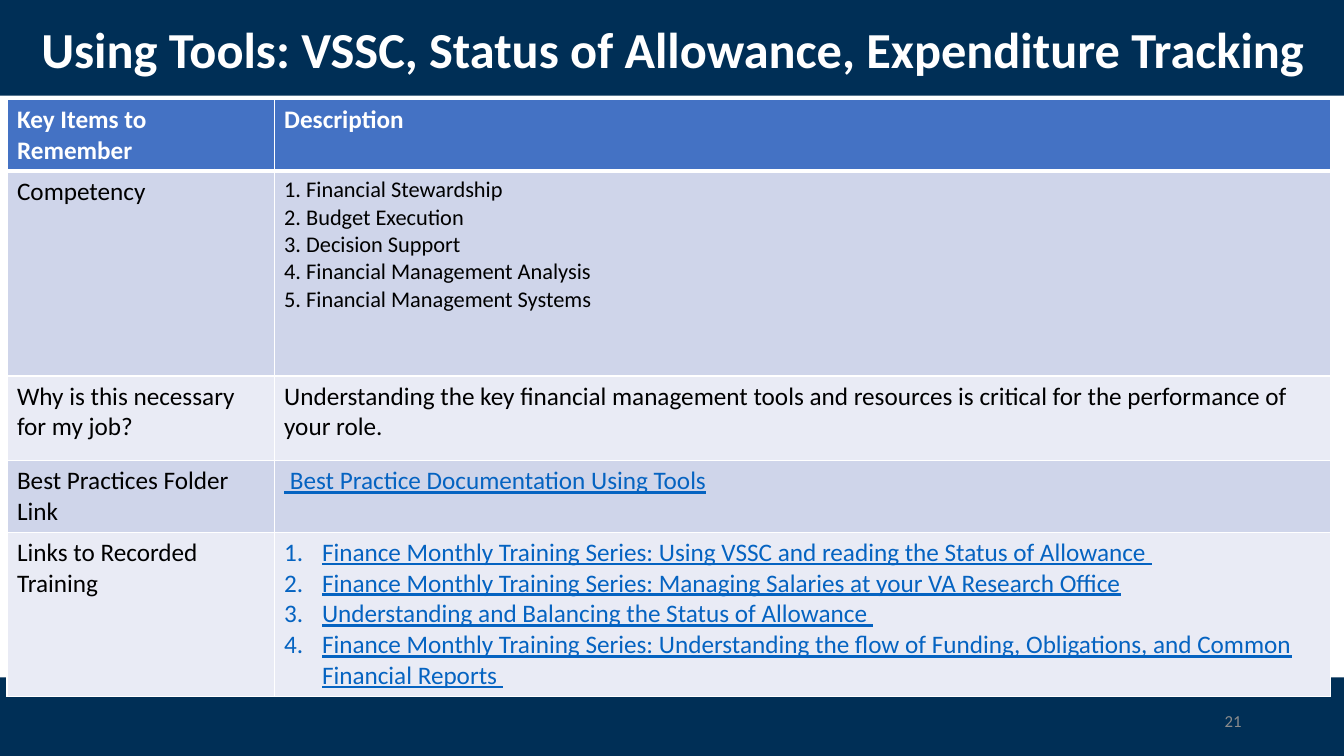
from dataclasses import dataclass

from lxml.etree import SubElement
from pptx import Presentation
from pptx.dml.color import RGBColor
from pptx.enum.shapes import MSO_SHAPE
from pptx.enum.text import MSO_ANCHOR, PP_ALIGN
from pptx.oxml.ns import qn
from pptx.util import Pt

FONT = "Calibri"
NAVY, BLUE, WHITE, BLACK = "002F56", "4472C4", "FFFFFF", "000000"
LINK, GREY = "0563C1", "8C8C8C"
BAND_FILLS = ("CFD5EA", "E9EBF5")
COLUMN_WIDTHS = (190.8, 754.8)
LIST_INDENT = 27


@dataclass(frozen=True)
class Band:
    top: float
    height: float


@dataclass(frozen=True)
class Item:
    label: str
    description: tuple[str, ...]
    height: float
    size: float = 18
    is_link: bool = False
    numbered: bool = False


BANDS = (Band(0, 68.4), Band(483.8, 56.2))

ITEMS = (
    Item("Key Items to Remember", ("Description ",), 47.5),
    Item("Competency", (
        "1. Financial Stewardship",
        "2. Budget Execution ",
        "3. Decision Support",
        "4. Financial Management Analysis ",
        "5. Financial Management Systems",
    ), 146.2, size=16),
    Item("Why is this necessary for my job?", (
        "Understanding the key financial management tools and resources is "
        "critical for the performance of your role.",
    ), 60.5),
    Item("Best Practices Folder Link",
         (" Best Practice Documentation Using Tools",), 47.5, is_link=True),
    Item("Links to Recorded Training", (
        "Finance Monthly Training Series: Using VSSC and reading the Status of Allowance ",
        "Finance Monthly Training Series: Managing Salaries at your VA Research Office",
        "Understanding and Balancing the Status of Allowance ",
        "Finance Monthly Training Series: Understanding the flow of Funding, "
        "Obligations, and Common Financial Reports ",
    ), 108, is_link=True, numbered=True),
)


def rgb(value: str) -> RGBColor:
    return RGBColor.from_string(value)


def write(frame, *lines: str, size: float = 18, color: str = BLACK,
          bold: bool = False, underline: bool = False, numbered: bool = False,
          align: PP_ALIGN = PP_ALIGN.LEFT, spacing: float = 1.0) -> None:
    frame.word_wrap = True
    for index, line in enumerate(lines):
        paragraph = frame.paragraphs[0] if index == 0 else frame.add_paragraph()
        paragraph.alignment = align
        paragraph.line_spacing = spacing
        if numbered:
            number_paragraph(paragraph)
        run = paragraph.add_run()
        run.text = line
        font = run.font
        font.name, font.size = FONT, Pt(size)
        font.bold, font.underline = bold, underline
        font.color.rgb = rgb(color)


def number_paragraph(paragraph) -> None:
    properties = paragraph._p.get_or_add_pPr()
    properties.set("marL", str(Pt(LIST_INDENT)))
    properties.set("indent", str(-Pt(LIST_INDENT)))
    SubElement(properties, qn("a:buFont"), typeface="+mj-lt")
    SubElement(properties, qn("a:buAutoNum"), type="arabicPeriod")


def style_cell(cell, fill: str, top: float, bottom: float) -> None:
    """Give the cell white borders, then its fill."""
    properties = cell._tc.get_or_add_tcPr()
    for side, width in (("L", 1), ("R", 1), ("T", top), ("B", bottom)):
        line = SubElement(properties, qn(f"a:ln{side}"), w=str(Pt(width)))
        SubElement(SubElement(line, qn("a:solidFill")), qn("a:srgbClr"), val=WHITE)
    cell.fill.solid()
    cell.fill.fore_color.rgb = rgb(fill)


def add_band(slide, band: Band) -> None:
    shape = slide.shapes.add_shape(
        MSO_SHAPE.RECTANGLE, 0, Pt(band.top), Pt(960), Pt(band.height))
    shape.shadow.inherit = False
    shape.fill.solid()
    shape.fill.fore_color.rgb = rgb(NAVY)
    shape.line.fill.background()


def add_title(slide, text: str) -> None:
    title = slide.shapes.title
    title.left, title.top = Pt(22.3), Pt(13)
    title.width, title.height = Pt(923.8), Pt(49)
    title.text_frame.vertical_anchor = MSO_ANCHOR.MIDDLE
    write(title.text_frame, text, size=36, color=WHITE, bold=True, spacing=0.9)
    slide.shapes._spTree.append(title._element)  # in front of the bands


def add_items(slide, items: tuple[Item, ...]) -> None:
    table = slide.shapes.add_table(
        len(items), len(COLUMN_WIDTHS), Pt(5), Pt(71.2),
        Pt(sum(COLUMN_WIDTHS)), Pt(sum(item.height for item in items))).table
    table.horz_banding = False
    for column, width in zip(table.columns, COLUMN_WIDTHS):
        column.width = Pt(width)
    for index, item in enumerate(items):
        table.rows[index].height = Pt(item.height)
        header = index == 0
        fill = BLUE if header else BAND_FILLS[(index - 1) % 2]
        color = WHITE if header else BLACK
        label, description = table.rows[index].cells
        for cell in (label, description):
            style_cell(cell, fill, top=3 if index == 1 else 1,
                       bottom=3 if header else 1)
        write(label.text_frame, item.label, color=color, bold=header)
        write(description.text_frame, *item.description, size=item.size,
              color=LINK if item.is_link else color, bold=header,
              underline=item.is_link, numbered=item.numbered)


def add_page_number(slide, number: str) -> None:
    box = slide.shapes.add_textbox(Pt(678), Pt(500.6), Pt(216), Pt(28.8))
    box.text_frame.vertical_anchor = MSO_ANCHOR.MIDDLE
    write(box.text_frame, number, size=12, color=GREY, align=PP_ALIGN.RIGHT)


def main() -> None:
    deck = Presentation()
    deck.slide_width, deck.slide_height = Pt(960), Pt(540)
    slide = deck.slides.add_slide(deck.slide_layouts.get_by_name("Title Only"))
    for band in BANDS:
        add_band(slide, band)
    add_title(slide, "Using Tools: VSSC, Status of Allowance, Expenditure Tracking")
    add_items(slide, ITEMS)
    add_page_number(slide, "21")
    deck.save("out.pptx")


if __name__ == "__main__":
    main()
